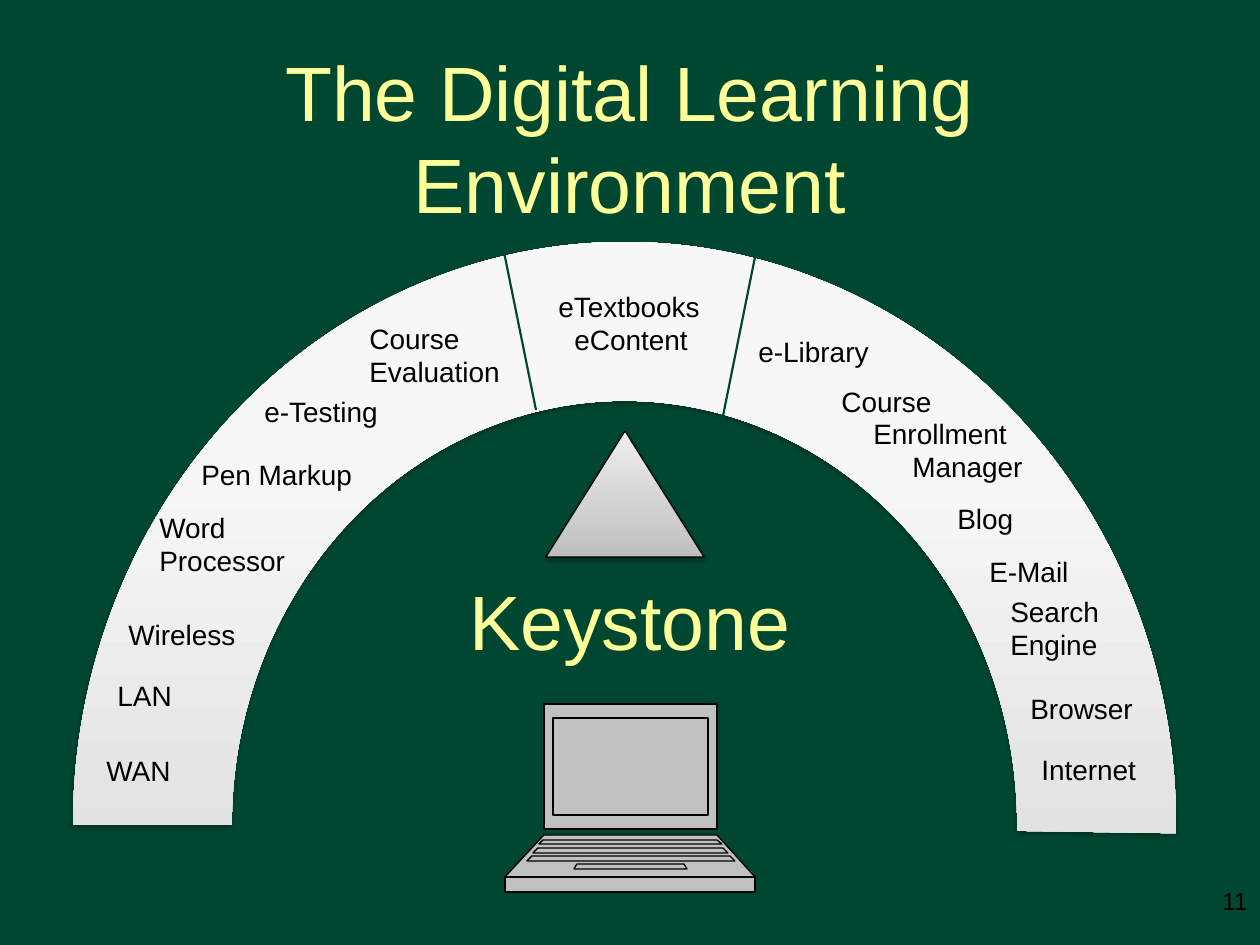
from copy import deepcopy

from lxml.etree import SubElement
from pptx import Presentation
from pptx.dml.color import RGBColor
from pptx.enum.shapes import MSO_CONNECTOR, MSO_SHAPE
from pptx.enum.text import MSO_ANCHOR, MSO_AUTO_SIZE, PP_ALIGN
from pptx.oxml.ns import qn
from pptx.util import Pt

EMU_PER_PX = 914400 / 126
FONT = "Arial"
GREEN = RGBColor(0x00, 0x47, 0x31)
YELLOW = RGBColor(0xFF, 0xFF, 0x99)
BLACK = RGBColor(0x00, 0x00, 0x00)
SILVER = RGBColor(0xC0, 0xC0, 0xC0)
ARCH_STOPS = [(0, "BEBEBE"), (0.8, "F7F7F7"), (1, "F8F8F8")]
KEYSTONE_STOPS = [(0, "BDBDBD"), (0.35, "D1D1D1"), (1, "EEEEEE")]

TITLE = "The Digital Learning Environment"
# Arch labels: left, top, width, lines, indent of the second line
LABELS = [
    (94, 747, 105, ["WAN"], 0),
    (105, 672, 105, ["LAN"], 0),
    (116, 611, 136, ["Wireless"], 0),
    (147, 504, 189, ["Word Processor"], 0),
    (189, 451, 199, ["Pen Markup"], 0),
    (252, 388, 147, ["e-Testing"], 0),
    (357, 315, 220, ["Course", "Evaluation"], 0),
    (546, 283, 189, ["eTextbooks", "eContent"], 16),
    (746, 328, 168, ["e-Library"], 0),
    (829, 378, 158, ["Course"], 0),
    (861, 410, 199, ["Enrollment", "Manager"], 39),
    (945, 495, 136, ["Blog"], 0),
    (977, 548, 136, ["E-Mail"], 0),
    (998, 588, 158, ["Search", "Engine"], 0),
    (1018, 685, 136, ["Browser"], 0),
    (1029, 746, 147, ["Internet"], 0),
]
LINE_HEIGHT, INSETS = 34, 12
# Joints between the keystone and the two arms: x1, y1, x2, y2
JOINTS = [(504, 252, 536, 410), (756, 252, 718, 441)]
# Laptop panels: top, bottom, top left, top right, bottom left, bottom right
LAPTOP = [
    (704, 829, 544, 717, 544, 717),  # lid
    (835, 877, 544, 717, 505, 755),  # deck
    (877, 892, 505, 755, 505, 755),  # front edge
    (718, 815, 553, 708, 553, 708),  # screen
    (840, 844, 543, 717, 539, 722),  # key rows
    (848, 853, 538, 723, 533, 728),
    (856, 861, 532, 730, 527, 735),
    (864, 869, 577, 684, 574, 687),  # space bar
]


def px(*lengths):
    return [round(length * EMU_PER_PX) for length in lengths]


def write(frame, lines, size, color, align=PP_ALIGN.LEFT, second_indent=0):
    frame.word_wrap = True
    frame.auto_size = MSO_AUTO_SIZE.NONE
    frame.vertical_anchor = MSO_ANCHOR.TOP
    frame.text = "\n".join(lines)
    for paragraph in frame.paragraphs:
        paragraph.alignment = align
        for run in paragraph.runs:
            run.font.name, run.font.size = FONT, Pt(size)
            run.font.color.rgb = color
    if second_indent:
        indent = px(second_indent)[0]
        frame.paragraphs[1]._p.get_or_add_pPr().set("marL", str(indent))


def add_text(slide, bounds, *args, **options):
    box = slide.shapes.add_textbox(*px(*bounds))
    write(box.text_frame, *args, **options)


def shade(shape, stops):
    """Vertical gradient that starts at the bottom."""
    shape.fill.gradient()
    shape.fill.gradient_angle = 90
    stop_list = shape._element.spPr.find(".//" + qn("a:gsLst"))
    stop_list.append(deepcopy(stop_list[-1]))
    for stop, (position, color) in zip(shape.fill.gradient_stops, stops):
        stop.position = position
        stop.color.rgb = RGBColor.from_string(color)


def drop_shadow(shape, opacity, distance):
    shape.shadow.inherit = False
    effects = shape._element.spPr.find(qn("a:effectLst"))
    shadow = SubElement(effects, qn("a:outerShdw"), blurRad=str(Pt(3.1)),
                        dist=str(Pt(distance)), dir="5400000", rotWithShape="0")
    color = SubElement(shadow, qn("a:srgbClr"), val="000000")
    SubElement(color, qn("a:alpha"), val=str(opacity * 1000))


def outline(shape, color, width):
    shape.line.color.rgb = color
    shape.line.width = Pt(width)


def add_laptop(slide):
    builder = None
    for top, bottom, top_left, top_right, low_left, low_right in LAPTOP:
        if builder is None:
            builder = slide.shapes.build_freeform(top_left, top, scale=EMU_PER_PX)
        else:
            builder.move_to(top_left, top)
        builder.add_line_segments(
            [(top_right, top), (low_right, bottom), (low_left, bottom)])
    laptop = builder.convert_to_shape()
    # Give each panel its own path, so that overlaps stay filled
    whole = laptop._element.spPr.find(".//" + qn("a:path"))
    for step in list(whole):
        if step.tag == qn("a:moveTo"):
            panel = SubElement(whole.getparent(), qn("a:path"), dict(whole.attrib))
        panel.append(step)
    whole.getparent().remove(whole)
    laptop.shadow.inherit = False
    laptop.fill.solid()
    laptop.fill.fore_color.rgb = SILVER
    outline(laptop, BLACK, 0.75)


def main():
    deck = Presentation()
    deck.slide_width, deck.slide_height = px(1260, 945)
    slide = deck.slides.add_slide(deck.slide_layouts[5])
    slide.background.fill.solid()
    slide.background.fill.fore_color.rgb = GREEN

    # Title and slide number
    title = slide.shapes.title
    title.left, title.top, title.width, title.height = px(63, 38, 1134, 157)
    write(title.text_frame, [TITLE], 44, YELLOW, PP_ALIGN.CENTER)
    add_text(slide, (966, 880, 294, 65), ["11"], 14, BLACK, PP_ALIGN.RIGHT)

    # Arch with its joints
    arch = slide.shapes.add_shape(MSO_SHAPE.BLOCK_ARC, *px(73, 242, 1103, 1166))
    for index, value in enumerate((108, 0.516, 0.144)):
        arch.adjustments[index] = value
    shade(arch, ARCH_STOPS)
    arch.line.fill.background()
    drop_shadow(arch, 35, 1.8)
    for ends in JOINTS:
        joint = slide.shapes.add_connector(MSO_CONNECTOR.STRAIGHT, *px(*ends))
        outline(joint, GREEN, 1.25)
        SubElement(joint._element.spPr, qn("a:effectLst"))

    # Labels on the arch
    for left, top, width, lines, indent in LABELS:
        rows = 2 if lines == ["Word Processor"] else len(lines)
        add_text(slide, (left, top, width, rows * LINE_HEIGHT + INSETS),
                 lines, 16, BLACK, second_indent=indent)

    # Keystone pointer, caption and laptop
    pointer = slide.shapes.add_shape(MSO_SHAPE.ISOSCELES_TRIANGLE,
                                     *px(546, 431, 158, 126))
    shade(pointer, KEYSTONE_STOPS)
    outline(pointer, BLACK, 0.75)
    drop_shadow(pointer, 38, 1.6)
    add_text(slide, (441, 567, 378, 106), ["Keystone"], 44, YELLOW, PP_ALIGN.CENTER)
    add_laptop(slide)

    deck.save("out.pptx")


if __name__ == "__main__":
    main()
